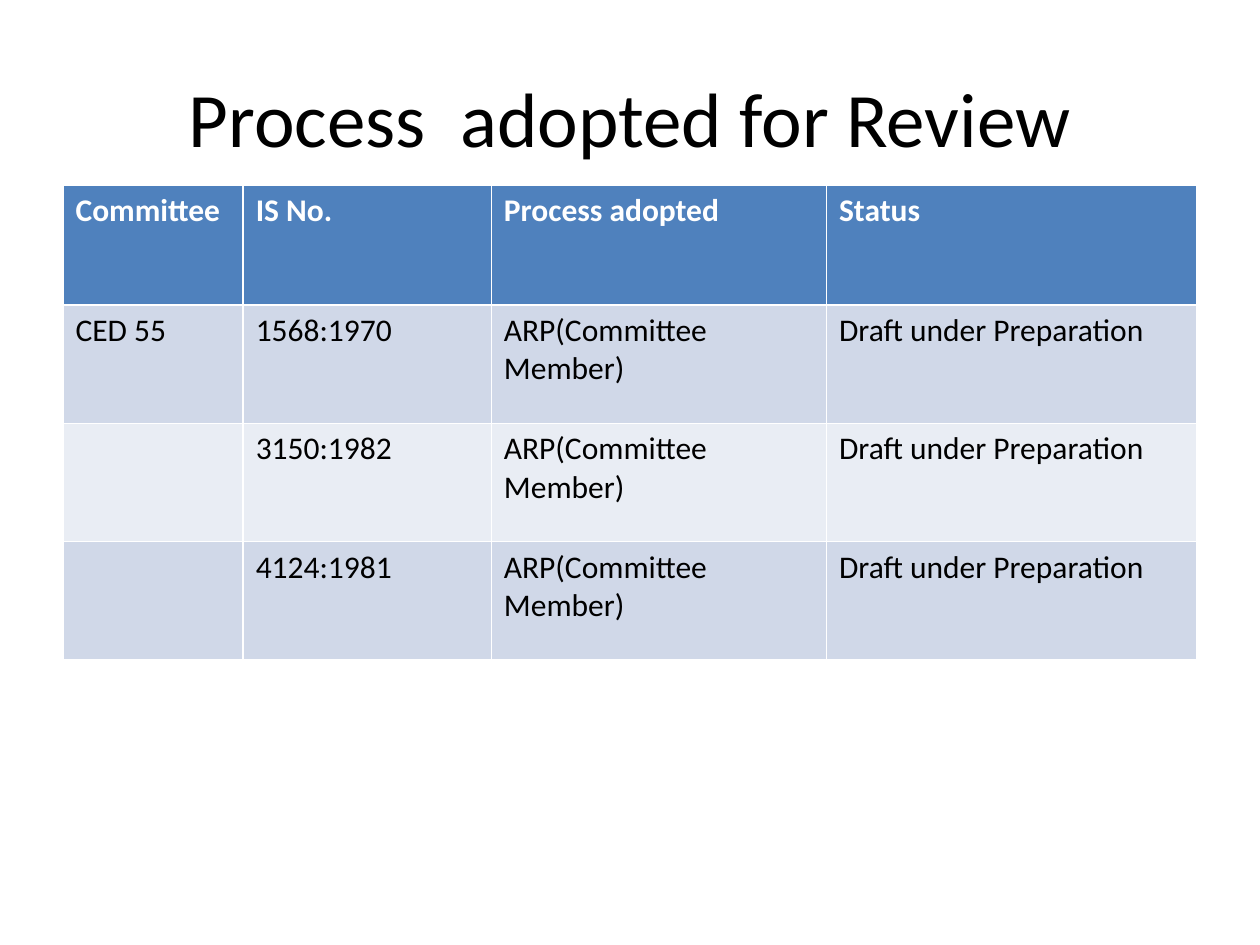
from pptx import Presentation
from pptx.dml.color import RGBColor
from pptx.enum.text import MSO_ANCHOR, PP_ALIGN
from pptx.util import Inches, Pt

TITLE = "Process  adopted for Review"
HEADERS = ["Committee", "IS No.", "Process adopted", "Status"]
PROCESS = "ARP(Committee Member)"
STATUS = "Draft under Preparation"
STANDARDS = [("CED 55", "1568:1970"), ("", "3150:1982"), ("", "4124:1981")]
ROWS = [HEADERS] + [[committee, number, PROCESS, STATUS]
                    for committee, number in STANDARDS]

COLUMN_WIDTHS = [1.43, 1.97, 2.66, 2.94]
ROW_HEIGHTS = [0.95, 0.94, 0.94, 0.94]
LEFT, TABLE_TOP = 0.5, 1.47
FONT = "Calibri"
COLORS = {
    "header": "4F81BD",
    "odd": "D0D8E8",
    "even": "E9EDF4",
    "header_text": "FFFFFF",
    "text": "000000",
}


def style_font(font, size, color, bold=False):
    font.name = FONT
    font.size = Pt(size)
    font.bold = bold
    font.color.rgb = RGBColor.from_string(COLORS[color])


def add_title(slide):
    box = slide.shapes.add_textbox(Inches(LEFT), Inches(0.3), Inches(9), Inches(1.25))
    text_frame = box.text_frame
    text_frame.word_wrap = True
    text_frame.vertical_anchor = MSO_ANCHOR.MIDDLE
    text_frame.text = TITLE
    paragraph = text_frame.paragraphs[0]
    paragraph.alignment = PP_ALIGN.CENTER
    style_font(paragraph.runs[0].font, 44, "text")


def add_review_table(slide):
    """Add the table; its default style supplies the white cell borders."""
    table = slide.shapes.add_table(
        len(ROWS), len(HEADERS), Inches(LEFT), Inches(TABLE_TOP),
        Inches(sum(COLUMN_WIDTHS)), Inches(sum(ROW_HEIGHTS))).table
    for column, width in zip(table.columns, COLUMN_WIDTHS):
        column.width = Inches(width)
    for row_index, (row, height) in enumerate(zip(table.rows, ROW_HEIGHTS)):
        row.height = Inches(height)
        is_header = row_index == 0
        fill = "header" if is_header else "odd" if row_index % 2 else "even"
        for cell, text in zip(row.cells, ROWS[row_index]):
            cell.fill.solid()
            cell.fill.fore_color.rgb = RGBColor.from_string(COLORS[fill])
            cell.text = text
            for run in cell.text_frame.paragraphs[0].runs:
                style_font(run.font, 18, "header_text" if is_header else "text", is_header)


def main():
    presentation = Presentation()
    presentation.slide_width = Inches(10)
    presentation.slide_height = Inches(7.5)
    slide = presentation.slides.add_slide(presentation.slide_layouts[6])
    add_title(slide)
    add_review_table(slide)
    presentation.save("out.pptx")


if __name__ == "__main__":
    main()
